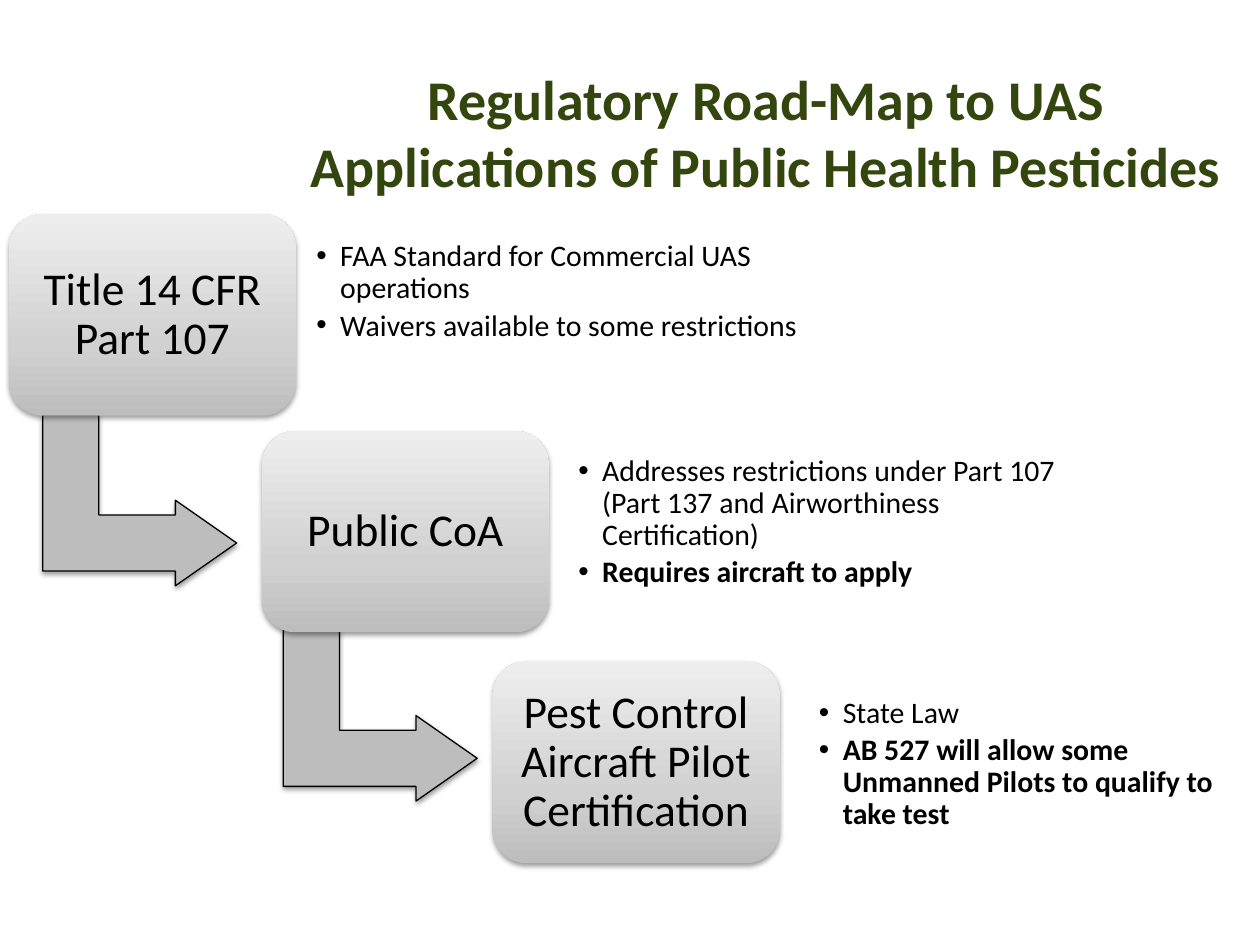
from copy import deepcopy

from lxml import etree
from pptx import Presentation
from pptx import util as u
from pptx.dml.color import RGBColor
from pptx.enum import shapes, text
from pptx.oxml import ns

GREEN = RGBColor(0x33, 0x46, 0x0E)
BLACK = RGBColor(0, 0, 0)
GREY = RGBColor(0xBD, 0xBD, 0xBD)
MID_GREY = RGBColor(0xD1, 0xD1, 0xD1)
PALE_GREY = RGBColor(0xEE, 0xEE, 0xEE)

# Each step: box corner, label, bullets (left, top, width), bullet lines (text, bold)
STEPS = [
    ((0.18, 4.32), "Title 14 CFR Part 107", (6.15, 4.24, 10.36),
     [("FAA Standard for Commercial UAS operations", False),
      ("Waivers available to some restrictions", False)]),
    ((5.28, 8.69), "Public CoA", (11.43, 8.89, 10.59),
     [("Addresses restrictions under Part 107 "
       "(Part 137 and Airworthiness Certification)", False),
      ("Requires aircraft to apply", True)]),
    ((9.93, 13.34), "Pest Control Aircraft Pilot Certification", (16.28, 13.77, 9.12),
     [("State Law", False),
      ("AB 527 will allow some Unmanned Pilots to qualify to take test", True)]),
]
ARROWS = [(1.09, 8.13), (5.94, 12.47)]


class RoadMap:
    font = "Calibri"
    box_size = (5.79, 4.06)
    arrow_size = (3.45, 3.91)
    bullets_height = 3.28

    def __init__(self, page):
        self.page = page

    def frame(self, shape, inset):
        """Prepare a middle-anchored, wrapping text frame."""
        frame = shape.text_frame
        frame.word_wrap = True
        frame.vertical_anchor = text.MSO_ANCHOR.MIDDLE
        frame.margin_left = frame.margin_right = u.Cm(inset)
        frame.margin_top = frame.margin_bottom = u.Cm(inset)
        return frame

    def span(self, para, words, size, color=BLACK, bold=False):
        span = para.add_run()
        span.text = words
        span.font.name = self.font
        span.font.size = u.Pt(size)
        span.font.bold = bold
        span.font.color.rgb = color

    def preset(self, kind, corner, size):
        """Add a preset shape with a soft shadow below it."""
        shape = self.page.shapes.add_shape(
            kind, *(u.Cm(length) for length in corner + size))
        shape.shadow.inherit = False
        effects = shape._element.spPr.find(ns.qn("a:effectLst"))
        shadow = etree.SubElement(
            effects, ns.qn("a:outerShdw"), blurRad=str(u.Pt(3.1)),
            dist=str(u.Pt(1.6)), dir="5400000", rotWithShape="0")
        color = etree.SubElement(shadow, ns.qn("a:srgbClr"), val=str(BLACK))
        etree.SubElement(color, ns.qn("a:alpha"), val="38000")
        return shape

    def title(self, words, left, top, width, height):
        box = self.page.shapes.add_textbox(*map(u.Cm, (left, top, width, height)))
        para = self.frame(box, 0.1).paragraphs[0]
        para.alignment = text.PP_ALIGN.CENTER
        self.span(para, words, 32, GREEN, True)

    def arrow(self, corner):
        arrow = self.preset(shapes.MSO_SHAPE.BENT_UP_ARROW, corner, self.arrow_size)
        arrow.rotation = 90
        for index, value in enumerate((0.328, 0.25, 0.358)):
            arrow.adjustments[index] = value
        arrow.fill.solid()
        arrow.fill.fore_color.rgb = GREY
        arrow.line.color.rgb = BLACK
        arrow.line.width = u.Pt(0.75)

    def step(self, corner, label):
        box = self.preset(shapes.MSO_SHAPE.ROUNDED_RECTANGLE, corner, self.box_size)
        box.line.fill.background()
        box.fill.gradient()
        box.fill.gradient_angle = 90
        stops = box._element.spPr.find(ns.qn("a:gradFill")).find(ns.qn("a:gsLst"))
        stops.insert(1, deepcopy(stops[0]))
        colors = ((0, GREY), (0.35, MID_GREY), (1, PALE_GREY))
        for stop, (position, color) in zip(box.fill.gradient_stops, colors):
            stop.position = position
            stop.color.rgb = color
        para = self.frame(box, 0.28).paragraphs[0]
        para.alignment = text.PP_ALIGN.CENTER
        para.line_spacing = 0.9
        self.span(para, label, 26)

    def bullets(self, left, top, width, lines):
        box = self.page.shapes.add_textbox(
            *map(u.Cm, (left, top, width, self.bullets_height)))
        frame = self.frame(box, 0.23)
        for index, (words, bold) in enumerate(lines):
            para = frame.add_paragraph() if index else frame.paragraphs[0]
            para.line_spacing = 0.9
            para.space_after = u.Pt(3)
            props = para._p.get_or_add_pPr()
            props.set("marL", str(u.Cm(0.48)))
            props.set("indent", str(u.Cm(-0.48)))
            etree.SubElement(props, ns.qn("a:buFont"), typeface="Arial")
            etree.SubElement(props, ns.qn("a:buChar"), char="•")
            self.span(para, words, 17, bold=bold)


def main():
    deck = Presentation()
    deck.slide_width, deck.slide_height = u.Cm(25.4), u.Cm(19.05)
    road_map = RoadMap(deck.slides.add_slide(deck.slide_layouts[6]))
    road_map.title("Regulatory Road-Map to UAS Applications of Public Health Pesticides",
                   5.92, 1.07, 19.05, 3.18)
    for corner in ARROWS:
        road_map.arrow(corner)
    for corner, label, place, lines in STEPS:
        road_map.step(corner, label)
        road_map.bullets(*place, lines)
    deck.save("out.pptx")


if __name__ == "__main__":
    main()
